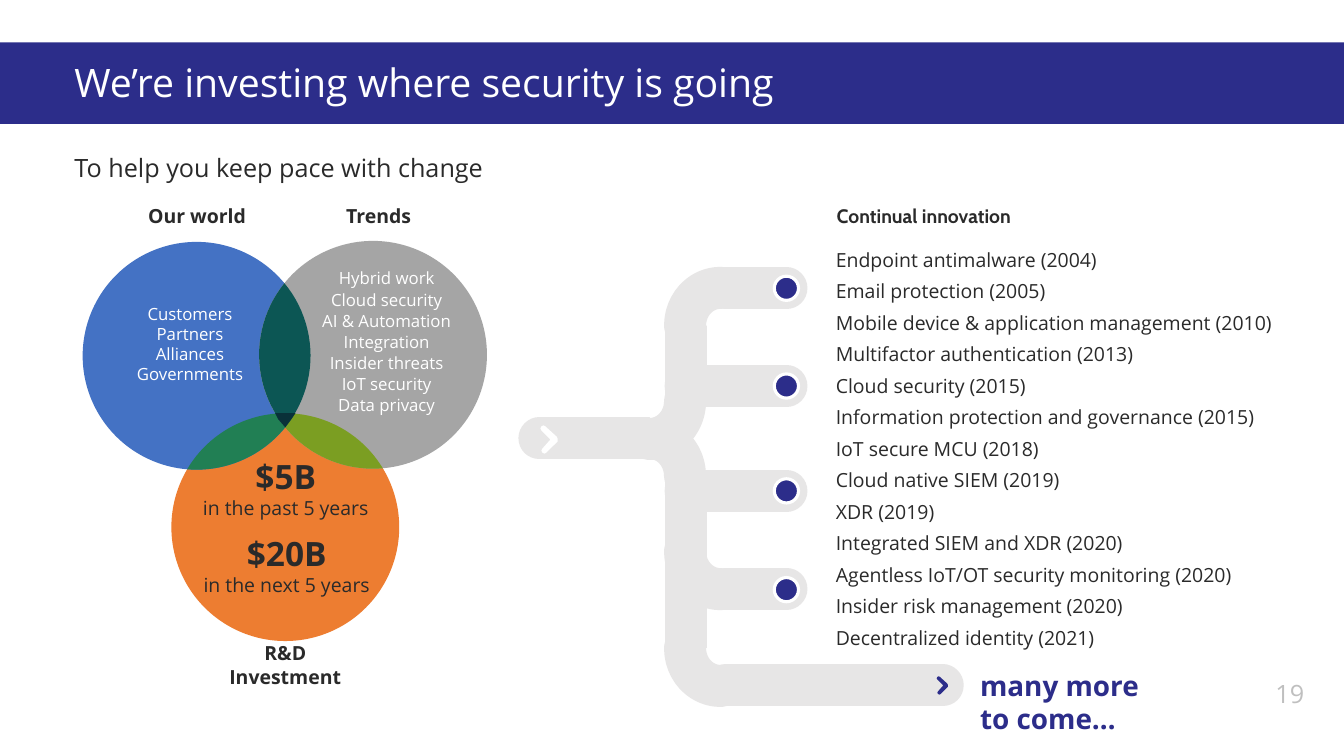
from math import acos, atan2, cos, dist, sin

from lxml import etree
from pptx import Presentation
from pptx.dml.color import RGBColor
from pptx.enum.shapes import MSO_CONNECTOR, MSO_SHAPE
from pptx.enum.text import MSO_ANCHOR, PP_ALIGN
from pptx.oxml.ns import qn
from pptx.util import Inches, Pt

NAVY = RGBColor(0x2C, 0x2D, 0x8A)
BLUE = RGBColor(0x44, 0x72, 0xC4)
GRAY = RGBColor(0xA5, 0xA5, 0xA5)
ORANGE = RGBColor(0xED, 0x7D, 0x31)
TEAL = RGBColor(0x0C, 0x56, 0x54)
OLIVE = RGBColor(0x7B, 0x9E, 0x22)
GREEN = RGBColor(0x21, 0x7F, 0x54)
DARK = RGBColor(0x09, 0x31, 0x39)
PIPE = RGBColor(0xE7, 0xE6, 0xE6)
PALE = RGBColor(0xBF, 0xBF, 0xBF)
INK = RGBColor(0x2A, 0x2A, 0x2A)
WHITE = RGBColor(0xFF, 0xFF, 0xFF)

LEFT, CENTER = PP_ALIGN.LEFT, PP_ALIGN.CENTER
TOP, MIDDLE = MSO_ANCHOR.TOP, MSO_ANCHOR.MIDDLE
OVAL, RECT, ARC = MSO_SHAPE.OVAL, MSO_SHAPE.RECTANGLE, MSO_SHAPE.ARC
STRAIGHT = MSO_CONNECTOR.STRAIGHT

BODY = 13.9
RADIUS = 1.13
WORLD, TRENDS, FUNDS = (1.95, 3.53), (3.7, 3.52), (2.83, 5.23)
CORE = [(2.84, 4.1), (2.93, 4.1), (2.89, 4.16), (2.83, 4.24), (2.76, 4.16), (2.73, 4.1)]
CHEVRON = [
    (0, 0.03), (0.01, 0.01), (0.03, 0), (0.05, 0.01), (0.16, 0.11),
    (0.17, 0.13), (0.17, 0.16), (0.06, 0.27), (0.04, 0.28), (0.02, 0.27),
    (0.01, 0.25), (0.02, 0.23), (0.1, 0.14), (0.01, 0.05),
]
TOPICS = [
    "Hybrid work", "Cloud security", "AI & Automation", "Integration",
    "Insider threats", "IoT security", "Data privacy",
]
STEPS = [
    "Endpoint antimalware (2004)",
    "Email protection (2005)",
    "Mobile device & application management (2010)",
    "Multifactor authentication (2013)",
    "Cloud security (2015)",
    "Information protection and governance (2015)",
    "IoT secure MCU (2018)",
    "Cloud native SIEM (2019)",
    "XDR (2019)",
    "Integrated SIEM and XDR (2020)",
    "Agentless IoT/OT security monitoring (2020)",
    "Insider risk management (2020)",
    "Decentralized identity (2021)",
]


def add_text(slide, box, lines, color=INK, align=LEFT, anchor=TOP,
             pad=(0, 0, 0, 0), font="Open Sans", gap=0):
    frame = slide.shapes.add_textbox(*map(Inches, box)).text_frame
    frame.word_wrap = True
    frame.vertical_anchor = anchor
    (frame.margin_left, frame.margin_top,
     frame.margin_right, frame.margin_bottom) = map(Inches, pad)
    for i, (words, size, bold) in enumerate(lines):
        para = frame.add_paragraph() if i else frame.paragraphs[0]
        para.alignment = align
        if i and gap:
            para.space_before = Pt(gap)
        for j, part in enumerate(words.split("\n")):
            if j:
                para.add_line_break()
            run = para.add_run()
            run.text = part
            run.font.name = font
            run.font.size = Pt(size)
            run.font.bold = bold
            run.font.color.rgb = color


def add_head(slide, box, words, align=CENTER, font="Open Sans"):
    add_text(slide, box, [(words, BODY, True)], align=align, anchor=MIDDLE,
             pad=(0.1, 0.1, 0.1, 0.1), font=font)


def paint(shape, fill, line=None, width=0):
    shape.shadow.inherit = False
    shape.fill.solid()
    shape.fill.fore_color.rgb = fill
    if line is None:
        shape.line.fill.background()
    else:
        shape.line.color.rgb = line
        shape.line.width = Pt(width)


def add_form(slide, kind, box, fill, line=None, width=0):
    shape = slide.shapes.add_shape(kind, *map(Inches, box))
    paint(shape, fill, line, width)
    return shape


def add_disc(slide, center, radius, fill, line=None, width=0):
    x, y = center
    box = (x - radius, y - radius, 2 * radius, 2 * radius)
    add_form(slide, OVAL, box, fill, line, width)


def add_area(slide, points, fill):
    first, *rest = [(Inches(x), Inches(y)) for x, y in points]
    form = slide.shapes.build_freeform(*first)
    form.add_line_segments(rest, close=True)
    paint(form.convert_to_shape(), fill)


def add_lens(slide, one, two, fill):
    half = acos(dist(one, two) / 2 / RADIUS)
    points = []
    for (x, y), (u, v) in ((one, two), (two, one)):
        mid = atan2(v - y, u - x)
        for i in range(24):
            turn = mid - half + 2 * half * i / 24
            points.append((x + RADIUS * cos(turn), y + RADIUS * sin(turn)))
    add_area(slide, points, fill)


def add_arrow(slide, left, top, fill, scale=1):
    add_area(slide, [(left + x * scale, top + y * scale) for x, y in CHEVRON], fill)


def add_pipe(slide, *ends):
    pipe = slide.shapes.add_connector(STRAIGHT, *map(Inches, ends))
    pipe.line.color.rgb = PIPE
    pipe.line.width = Pt(30)
    props = pipe._element.spPr
    props.get_or_add_ln().set("cap", "rnd")
    etree.SubElement(props, qn("a:effectLst"))


def add_bend(slide, left, top, turn, flip=False):
    bend = add_form(slide, ARC, (left, top, 0.75, 0.7), WHITE, PIPE, 30)
    bend.rotation = turn
    bend._element.spPr.get_or_add_ln().set("cap", "rnd")
    if flip:
        bend._element.spPr.xfrm.set("flipH", "1")


def draw_pipes(slide):
    add_pipe(slide, 6.8, 4.87, 7.8, 4.87)
    add_pipe(slide, 6.8, 5.47, 6.8, 4.76)
    add_bend(slide, 6.07, 4.37, 90, True)
    add_bend(slide, 6.77, 5.12, 270, True)
    add_pipe(slide, 7.2, 5.84, 7.8, 5.84)
    add_pipe(slide, 6.8, 6.43, 6.8, 4.76)
    add_pipe(slide, 7.2, 6.8, 9.35, 6.8)
    add_bend(slide, 6.77, 6.08, 270, True)
    add_pipe(slide, 6.8, 3.83, 7.8, 3.83)
    add_pipe(slide, 6.8, 3.23, 6.8, 3.95)
    add_pipe(slide, 5.35, 4.35, 6.46, 4.35)
    add_bend(slide, 6.07, 3.63, 90)
    add_bend(slide, 6.77, 2.88, 270)
    add_pipe(slide, 7.2, 2.86, 7.8, 2.86)
    add_arrow(slide, 5.36, 4.22, WHITE)
    add_arrow(slide, 9.29, 6.71, NAVY, 0.65)
    for y in (2.86, 3.83, 4.87, 5.85):
        add_disc(slide, (7.8, y), 0.12, NAVY, WHITE, 2.25)


def draw_venn(slide):
    for center, fill in ((FUNDS, ORANGE), (WORLD, BLUE), (TRENDS, GRAY)):
        add_disc(slide, center, RADIUS, fill)
    add_lens(slide, WORLD, TRENDS, TEAL)
    add_lens(slide, TRENDS, FUNDS, OLIVE)
    add_lens(slide, WORLD, FUNDS, GREEN)
    add_area(slide, CORE, DARK)
    add_head(slide, (1.36, 1.92, 1.19, 0.44), "Our world")
    add_head(slide, (2.51, 1.92, 2.49, 0.44), "Trends")
    add_head(slide, (1.95, 6.26, 1.76, 0.67), "R&D\nInvestment")
    groups = ["Customers", "Partners", "Alliances", "Governments"]
    add_text(slide, (1.33, 3.01, 1.11, 0.82),
             [(name, 12, False) for name in groups], WHITE, CENTER)
    add_text(slide, (3.19, 2.66, 1.29, 1.51),
             [(name, 12, False) for name in TOPICS], WHITE, CENTER, gap=0.7)
    for left, top, price, span in ((1.87, 4.52, "$5B", "in the past 5 years"),
                                   (1.88, 5.29, "$20B", "in the next 5 years")):
        add_text(slide, (left, top, 1.93, 0.65),
                 [(price, 23.9, True), (span, BODY, False)], align=CENTER)


def draw_list(slide):
    add_head(slide, (8.2, 1.92, 3.36, 0.44), "Continual innovation", LEFT, "Cabin")
    for i, step in enumerate(STEPS):
        add_text(slide, (8.29, 2.46 + i * 3.75 / 12, 4.4, 0.24), [(step, BODY, False)])
    add_text(slide, (9.72, 6.63, 3.02, 0.67),
             [("many more\nto come…", 19.9, True)], NAVY)


def main():
    deck = Presentation()
    deck.slide_width, deck.slide_height = Inches(13.33), Inches(7.5)
    slide = deck.slides.add_slide(deck.slide_layouts[6])
    draw_venn(slide)
    draw_pipes(slide)
    draw_list(slide)
    add_form(slide, RECT, (0, 0.42, 13.33, 0.81), NAVY)
    add_text(slide, (0.64, 0.58, 12.05, 0.47),
             [("We’re investing where security is going", 28, False)],
             WHITE, pad=(0.1, 0, 0.1, 0.1))
    add_text(slide, (0.64, 1.46, 12.05, 0.3),
             [("To help you keep pace with change", 18, False)],
             pad=(0.1, 0.05, 0.1, 0.05))
    add_text(slide, (12.65, 6.73, 0.33, 0.81), [("19", 18, False)], PALE)
    deck.save("out.pptx")


if __name__ == "__main__":
    main()
